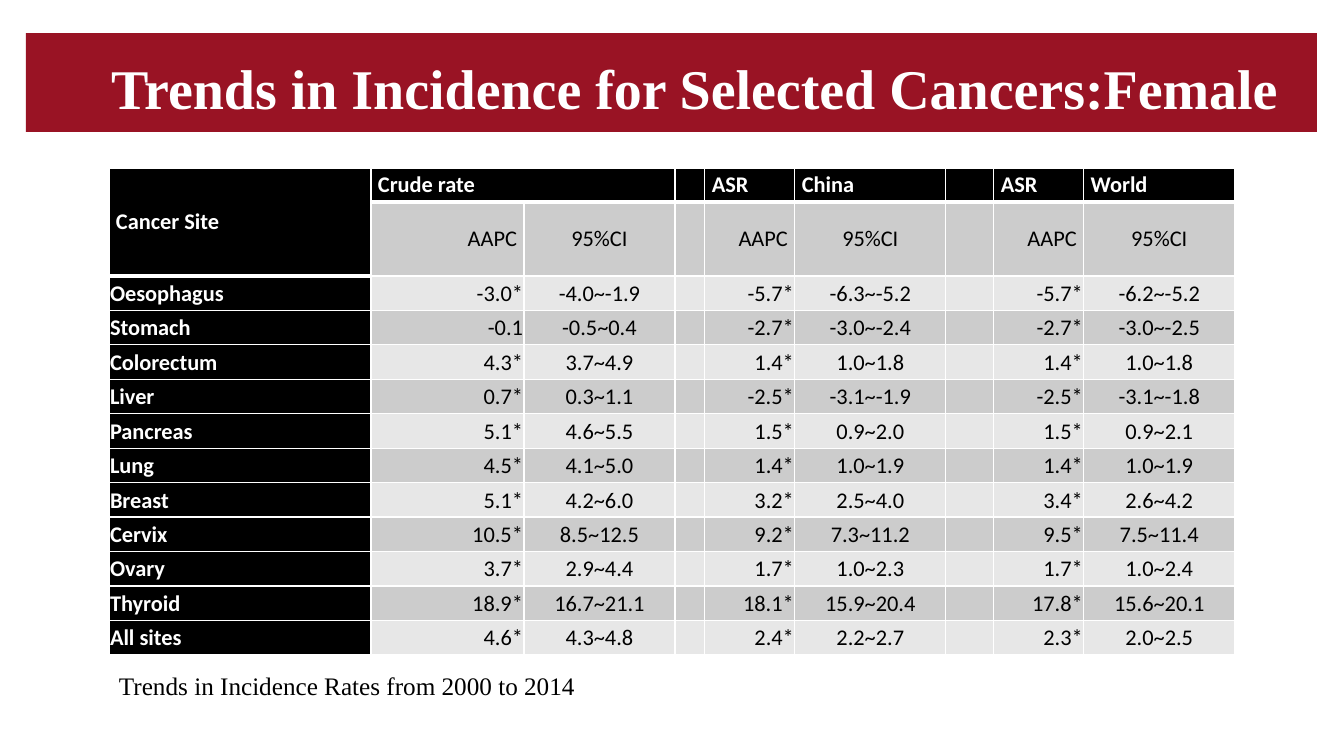
from lxml import etree
from pptx import Presentation
from pptx.dml.color import RGBColor
from pptx.enum.shapes import MSO_SHAPE
from pptx.enum.text import MSO_ANCHOR, MSO_AUTO_SIZE, PP_ALIGN
from pptx.oxml.ns import qn
from pptx.util import Pt

EMU_PER_PX = 9144000 / 1008
RECTANGLE = MSO_SHAPE.RECTANGLE
MIDDLE = MSO_ANCHOR.MIDDLE
LEFT, CENTER, RIGHT = PP_ALIGN.LEFT, PP_ALIGN.CENTER, PP_ALIGN.RIGHT
NO_FIT, GROW = MSO_AUTO_SIZE.NONE, MSO_AUTO_SIZE.SHAPE_TO_FIT_TEXT

CRIMSON = RGBColor(0x99, 0x13, 0x24)
WHITE = RGBColor(0xFF, 0xFF, 0xFF)
BLACK = RGBColor(0, 0, 0)
DARK_BAND = RGBColor(0xCC, 0xCC, 0xCC)
LIGHT_BAND = RGBColor(0xE7, 0xE7, 0xE7)

TITLE_FONT = {"name": "Times New Roman", "size": Pt(40), "bold": True}
CAPTION_FONT = {"name": "Times New Roman", "size": Pt(18), "bold": False}
LABEL_FONT = {"name": "Calibri", "size": Pt(16), "bold": True}
VALUE_FONT = {"name": "Calibri", "size": Pt(16), "bold": False}

COLUMN_WIDTHS = [262, 153, 151, 30, 90, 151, 48, 90, 151]
HEADER_HEIGHTS = [34, 74]
ALIGNMENTS = [LEFT] + [RIGHT, CENTER, LEFT] * 2 + [RIGHT, CENTER]
GROUP_HEADS = ["Cancer Site", "Crude rate", "", "", "ASR", "China", "", "ASR", "World"]
MEASURES = ["", "AAPC", "95%CI", "", "AAPC", "95%CI", "", "AAPC", "95%CI"]
TRENDS = [
    ("Oesophagus", "-3.0*", "-4.0~-1.9", "-5.7*", "-6.3~-5.2", "-5.7*", "-6.2~-5.2"),
    ("Stomach", "-0.1", "-0.5~0.4", "-2.7*", "-3.0~-2.4", "-2.7*", "-3.0~-2.5"),
    ("Colorectum", "4.3*", "3.7~4.9", "1.4*", "1.0~1.8", "1.4*", "1.0~1.8"),
    ("Liver", "0.7*", "0.3~1.1", "-2.5*", "-3.1~-1.9", "-2.5*", "-3.1~-1.8"),
    ("Pancreas", "5.1*", "4.6~5.5", "1.5*", "0.9~2.0", "1.5*", "0.9~2.1"),
    ("Lung", "4.5*", "4.1~5.0", "1.4*", "1.0~1.9", "1.4*", "1.0~1.9"),
    ("Breast", "5.1*", "4.2~6.0", "3.2*", "2.5~4.0", "3.4*", "2.6~4.2"),
    ("Cervix", "10.5*", "8.5~12.5", "9.2*", "7.3~11.2", "9.5*", "7.5~11.4"),
    ("Ovary", "3.7*", "2.9~4.4", "1.7*", "1.0~2.3", "1.7*", "1.0~2.4"),
    ("Thyroid", "18.9*", "16.7~21.1", "18.1*", "15.9~20.4", "17.8*", "15.6~20.1"),
    ("All sites", "4.6*", "4.3~4.8", "2.4*", "2.2~2.7", "2.3*", "2.0~2.5"),
]


def px(length):
    """Turn a length in px into EMU."""
    return round(length * EMU_PER_PX)


def apply(target, values):
    """Set each attribute in values on target."""
    for name, value in values.items():
        setattr(target, name, value)


def write(frame, text, font, color, align=LEFT):
    """Write one formatted line into a text frame and return its paragraph."""
    para = frame.paragraphs[0]
    para.alignment = align
    if text:
        span = para.add_run()
        span.text = text
        apply(span.font, font)
        span.font.color.rgb = color
    return para


def add_title_band(page, left, top, width, height):
    """Place the crimson band with the slide title on it."""
    band = page.shapes.add_shape(RECTANGLE, *map(px, (left, top, width, height)))
    band.shadow.inherit = False
    band.fill.solid()
    band.fill.fore_color.rgb = CRIMSON
    band.line.fill.background()
    title = page.shapes.title
    band._element.addnext(title._element)
    apply(title, {"left": px(left + 75), "top": px(top + 11),
                  "width": px(width - 48), "height": px(height - 5)})
    apply(title.text_frame, {"word_wrap": True, "auto_size": NO_FIT,
                             "vertical_anchor": MIDDLE})
    para = write(title.text_frame, "Trends in Incidence for Selected Cancers:Female",
                 TITLE_FONT, WHITE)
    para.line_spacing = 0.9


def add_borders(cell, top_points, bottom_points):
    """Draw white lines on the four sides of a cell."""
    properties = cell._tc.get_or_add_tcPr()
    sides = {"L": 1, "R": 1, "T": top_points, "B": bottom_points}
    for side, points in sides.items():
        line = etree.SubElement(properties, qn(f"a:ln{side}"), w=str(Pt(points)))
        fill = etree.SubElement(line, qn("a:solidFill"))
        etree.SubElement(fill, qn("a:srgbClr"), val=str(WHITE))


def format_cell(cell, row, column, text):
    """Fill in one table cell according to its row and column."""
    is_label = row == 0 or column == 0
    is_header = row < len(HEADER_HEIGHTS)
    side = px(7 if is_header else 1)
    apply(cell, {"vertical_anchor": MIDDLE, "margin_left": side, "margin_right": side,
                 "margin_top": 0 if is_header else px(1), "margin_bottom": 0})
    heavy_row = 2 if column == 0 else 1
    add_borders(cell, 3 if row == heavy_row else 1,
                3 if row == 0 or row == heavy_row - 1 else 1)
    band = DARK_BAND if row % 2 else LIGHT_BAND
    cell.fill.solid()
    cell.fill.fore_color.rgb = BLACK if is_label else band
    write(cell.text_frame, text, LABEL_FONT if is_label else VALUE_FONT,
          WHITE if is_label else BLACK, LEFT if is_label else ALIGNMENTS[column])


def add_trend_table(page, left, top, width, height):
    """Place the table of incidence trends by cancer site."""
    body = [[*trend[:3], "", *trend[3:5], "", *trend[5:]] for trend in TRENDS]
    rows = [GROUP_HEADS, MEASURES, *body]
    frame = page.shapes.add_table(len(rows), len(COLUMN_WIDTHS),
                                  *map(px, (left, top, width, height)))
    table = frame.table
    table.horz_banding = False
    for column, column_width in zip(table.columns, COLUMN_WIDTHS):
        column.width = px(column_width)
    body_height = (height - sum(HEADER_HEIGHTS)) / len(TRENDS)
    heights = HEADER_HEIGHTS + [body_height] * len(TRENDS)
    for row, row_height in zip(table.rows, heights):
        row.height = px(row_height)
    for row, texts in enumerate(rows):
        for column, text in enumerate(texts):
            format_cell(table.cell(row, column), row, column, text)
    table.cell(0, 0).merge(table.cell(1, 0))
    table.cell(0, 1).merge(table.cell(0, 2))


def add_caption(page, left, top, width, height):
    """Place the line below the table."""
    box = page.shapes.add_textbox(*map(px, (left, top, width, height)))
    apply(box.text_frame, {"word_wrap": False, "auto_size": GROW})
    write(box.text_frame, "Trends in Incidence Rates from 2000 to 2014",
          CAPTION_FONT, BLACK)


def main():
    """Build the deck and save it."""
    deck = Presentation()
    apply(deck, {"slide_width": px(1344), "slide_height": px(756)})
    page = deck.slides.add_slide(deck.slide_layouts[5])
    add_title_band(page, 26, 33, 1291, 99)
    add_trend_table(page, 109, 168, 1126, 487)
    add_caption(page, 109, 665, 488, 40)
    deck.save("out.pptx")


if __name__ == "__main__":
    main()
